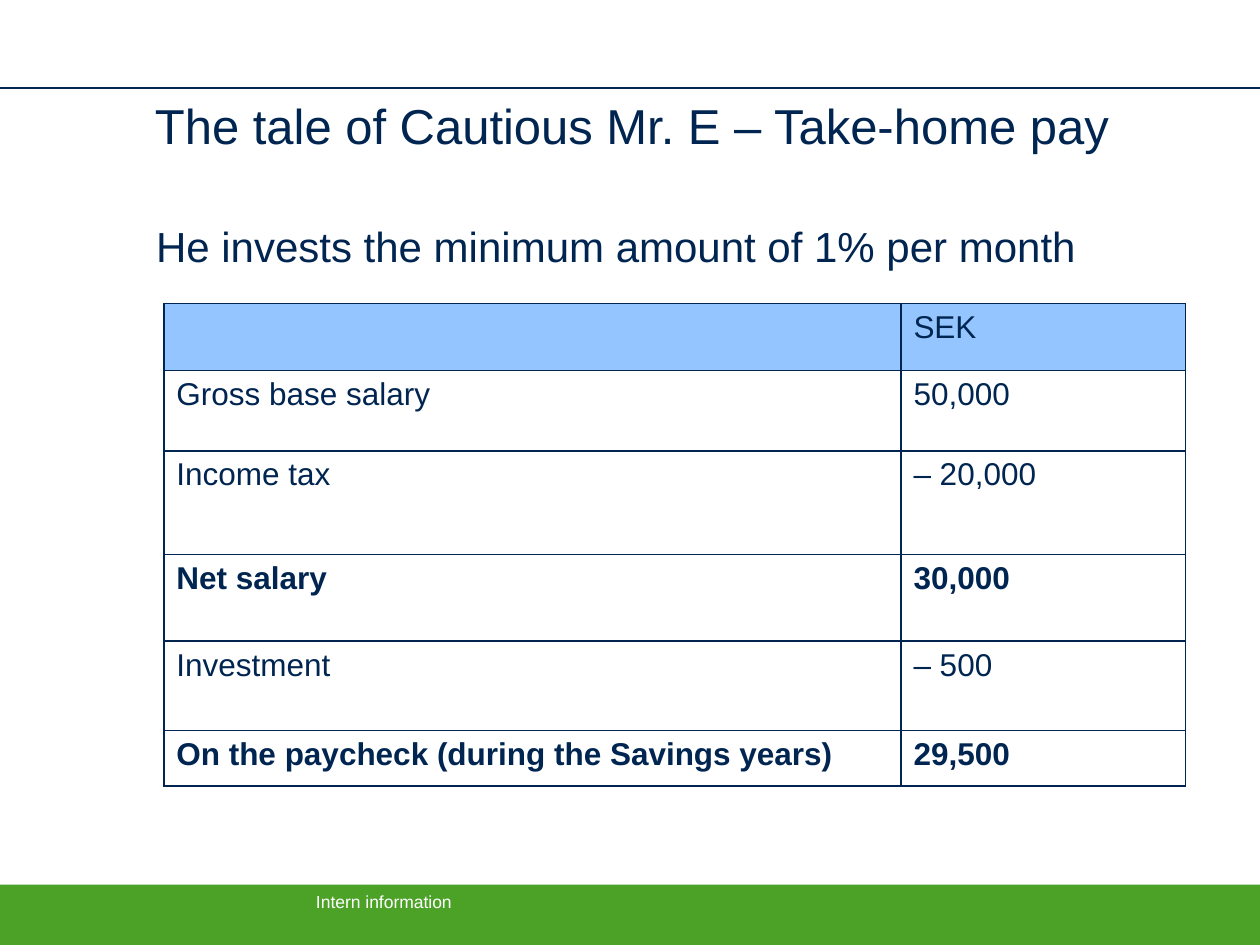
from lxml import etree
from pptx import Presentation
from pptx import util as u
from pptx.dml.color import RGBColor
from pptx.enum import shapes
from pptx.oxml.ns import qn

NAVY = RGBColor(0x00, 0x25, 0x51)
GREEN = RGBColor(0x4B, 0xA2, 0x27)
LIGHT_BLUE = RGBColor(0x94, 0xC5, 0xFF)
WHITE = RGBColor(0xFF, 0xFF, 0xFF)

COL_WIDTHS = [5.85, 2.26]
ROW_HEIGHTS = [0.53, 0.64, 0.82, 0.69, 0.71, 0.44]
PAY_ROWS = [
    ("", "SEK"),
    ("Gross base salary", "50,000"),
    ("Income tax", "– 20,000"),
    ("Net salary", "30,000"),
    ("Investment", "– 500"),
    ("On the paycheck (during the Savings years)", "29,500"),
]
BOLD_ROWS = {3, 5}


def set_font(font, size, color=NAVY, bold=False):
    """Apply the slide's typeface with the given size, colour and weight."""
    values = {"name": "Arial", "size": u.Pt(size), "bold": bold}
    for name, value in values.items():
        setattr(font, name, value)
    font.color.rgb = color


def add_text(s, box, content, size, color=NAVY, margins=None, spacing=None):
    """Place one line of wrapped text in the box."""
    tf = s.shapes.add_textbox(*map(u.Inches, box)).text_frame
    tf.word_wrap = True
    for name, value in (margins or {}).items():
        setattr(tf, name, u.Inches(value))
    p = tf.paragraphs[0]
    p.line_spacing = spacing
    r = p.add_run()
    r.text = content
    set_font(r.font, size, color)


def add_header(s, left, top, width):
    """Draw the top rule and the title below it."""
    sp = s.shapes.add_connector(
        shapes.MSO_CONNECTOR.STRAIGHT,
        u.Inches(left), u.Inches(top), u.Inches(left + width), u.Inches(top))
    sp.line.color.rgb = NAVY
    sp.line.width = u.Pt(1)
    etree.SubElement(sp._element.spPr, qn("a:effectLst"))
    sides = ("left", "top", "right", "bottom")
    add_text(s, (left + 1.18, top + 0.06, 8.44, 0.53),
             "The tale of Cautious Mr. E – Take-home pay", 28,
             margins={f"margin_{side}": 0.05 for side in sides}, spacing=0.9)


def add_footer(s, left, top, width, height):
    """Draw the footer band and its label."""
    sp = s.shapes.add_shape(
        shapes.MSO_SHAPE.RECTANGLE, *map(u.Inches, (left, top, width, height)))
    sp.shadow.inherit = False
    sp.fill.solid()
    sp.fill.fore_color.rgb = GREEN
    sp.line.fill.background()
    add_text(s, (left + 2.41, top, 6.13, 0.27), "Intern information", 10, WHITE)


def set_borders(cell):
    """Outline a cell with thin navy lines."""
    tc_pr = cell._tc.get_or_add_tcPr()
    for i, side in enumerate(("lnL", "lnR", "lnT", "lnB")):
        ln = etree.Element(qn(f"a:{side}"), w=str(u.Pt(1)))
        fill = etree.SubElement(ln, qn("a:solidFill"))
        etree.SubElement(fill, qn("a:srgbClr"), val=str(NAVY))
        tc_pr.insert(i, ln)


def add_pay_table(s, left, top):
    """Build the take-home pay table from its top-left corner."""
    box = (left, top, sum(COL_WIDTHS), sum(ROW_HEIGHTS))
    table = s.shapes.add_table(
        len(PAY_ROWS), len(COL_WIDTHS), *map(u.Inches, box)).table
    for column, width in zip(table.columns, COL_WIDTHS):
        column.width = u.Inches(width)
    for i, (row, height, values) in enumerate(
            zip(table.rows, ROW_HEIGHTS, PAY_ROWS)):
        row.height = u.Inches(height)
        for cell, value in zip(row.cells, values):
            if i == 0:
                cell.fill.solid()
                cell.fill.fore_color.rgb = LIGHT_BLUE
            else:
                cell.fill.background()
            p = cell.text_frame.paragraphs[0]
            if value:
                r = p.add_run()
                r.text = value
                set_font(r.font, 18, bold=i in BOLD_ROWS)
            set_borders(cell)


def main():
    """Build the take-home pay slide."""
    prs = Presentation()
    prs.slide_width, prs.slide_height = u.Inches(10), u.Inches(7.5)
    s = prs.slides.add_slide(prs.slide_layouts[6])
    add_footer(s, 0, 7.02, 10, 0.48)
    add_header(s, 0, 0.7, 10)
    add_text(s, (1.14, 1.7, 8.43, 0.5),
             "He invests the minimum amount of 1% per month", 24)
    add_pay_table(s, 1.3, 2.41)
    prs.save("out.pptx")


if __name__ == "__main__":
    main()
